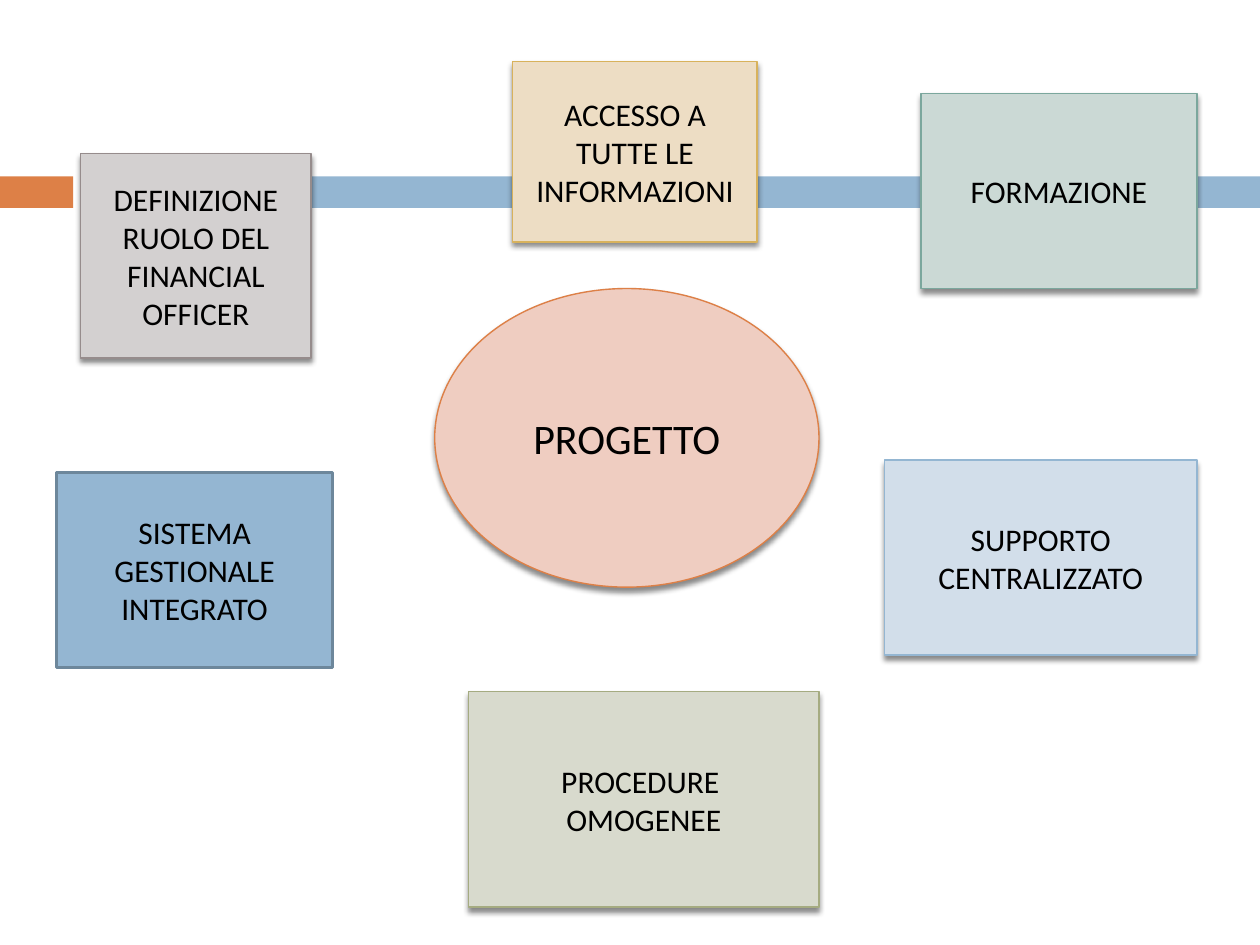
from lxml import etree
from pptx import Presentation
from pptx.dml.color import RGBColor
from pptx.enum.shapes import MSO_SHAPE
from pptx.enum.text import MSO_ANCHOR, PP_ALIGN
from pptx.oxml.ns import qn
from pptx.util import Inches, Pt

RECT, OVAL = MSO_SHAPE.RECTANGLE, MSO_SHAPE.OVAL
MIDDLE, CENTER = MSO_ANCHOR.MIDDLE, PP_ALIGN.CENTER

# Theme: colour pairs are (fill, line)
THEME = {
    "font": "Calibri", "text": "000000", "hub": 24, "node": 18,
    "thin": 0.79, "thick": 1.5,
    "orange": ("EFCDC1", "DD8047"), "grey": ("D3D0D0", "968C8C"),
    "gold": ("EDDDC4", "D8B25C"), "olive": ("D8DACD", "A5AB81"),
    "sky": ("D2DEEA", "94B6D2"), "teal": ("CBD9D5", "7BA79D"),
    "blue": ("94B6D2", "6D879B"),
}
SHADOW = {"blurRad": Pt(3), "dist": Pt(2.4), "dir": 90 * 60000,
          "algn": "ctr", "rotWithShape": 0}
OPACITY = 45

# Grid: 100 columns by 75 rows
COLS, ROWS = 100, 75
WIDTH, HEIGHT = Inches(10), Inches(7.5)

# Band: left, width, colour
BAND_TOP, BAND_TALL = 14, 2.5
BAND = [(0, 5.8, "DD8047"), (6.5, 93.5, "94B6D2")]

# Nodes: text, left, top, width, height, colours
HUB = ("PROGETTO", 34.5, 22.9, 30.5, 23.7, "orange")
NODES = [
    ("DEFINIZIONE RUOLO DEL FINANCIAL OFFICER", 6.4, 12.2, 18.3, 16.2, "grey"),
    ("ACCESSO A TUTTE LE INFORMAZIONI", 40.7, 4.9, 19.4, 14.3, "gold"),
    ("PROCEDURE \nOMOGENEE", 37.2, 54.9, 27.8, 17.1, "olive"),
    ("SUPPORTO CENTRALIZZATO", 70.2, 36.5, 24.8, 15.5, "sky"),
    ("FORMAZIONE", 73.1, 7.4, 21.9, 15.5, "teal"),
]
FLAT = ("SISTEMA GESTIONALE INTEGRATO", 4.5, 37.5, 21.9, 15.5, "blue")


def add_form(slide, kind, left, top, wide, tall, fill):
    """Place a flat filled shape by grid columns and rows."""
    col, row = WIDTH / COLS, HEIGHT / ROWS
    form = slide.shapes.add_shape(kind, round(left * col), round(top * row),
                                  round(wide * col), round(tall * row))
    form.shadow.inherit = False
    form.fill.solid()
    form.fill.fore_color.rgb = RGBColor.from_string(fill)
    form.line.fill.background()
    return form


def add_shade(form):
    """Drop a soft shadow straight below the shape."""
    group = form._element.spPr.find(qn("a:effectLst"))
    shade = etree.SubElement(group, qn("a:outerShdw"),
                             {key: str(val) for key, val in SHADOW.items()})
    color = etree.SubElement(shade, qn("a:srgbClr"), val="000000")
    etree.SubElement(color, qn("a:alpha"), val=str(OPACITY * 1000))


def add_node(slide, node, kind=RECT, size="node", line="thin", shade=True):
    text, *place, tone = node
    fill, edge = THEME[tone]
    form = add_form(slide, kind, *place, fill)
    form.line.color.rgb = RGBColor.from_string(edge)
    form.line.width = Pt(THEME[line])
    if shade:
        add_shade(form)
    frame = form.text_frame
    frame.word_wrap = True
    frame.vertical_anchor = MIDDLE
    para = frame.paragraphs[0]
    para.text = text.replace("\n", "\v")
    para.alignment = CENTER
    style = {"name": THEME["font"], "size": Pt(THEME[size])}
    for run in para.runs:
        for key, val in style.items():
            setattr(run.font, key, val)
        run.font.color.rgb = RGBColor.from_string(THEME["text"])


def main():
    deck = Presentation()
    deck.slide_width, deck.slide_height = WIDTH, HEIGHT
    slide = deck.slides.add_slide(deck.slide_layouts[6])

    # Band behind the nodes
    for left, wide, fill in BAND:
        add_form(slide, RECT, left, BAND_TOP, wide, BAND_TALL, fill)

    # Hub and the nodes around it
    add_node(slide, HUB, kind=OVAL, size="hub")
    for node in NODES:
        add_node(slide, node)
    add_node(slide, FLAT, line="thick", shade=False)

    deck.save("out.pptx")


if __name__ == "__main__":
    main()
